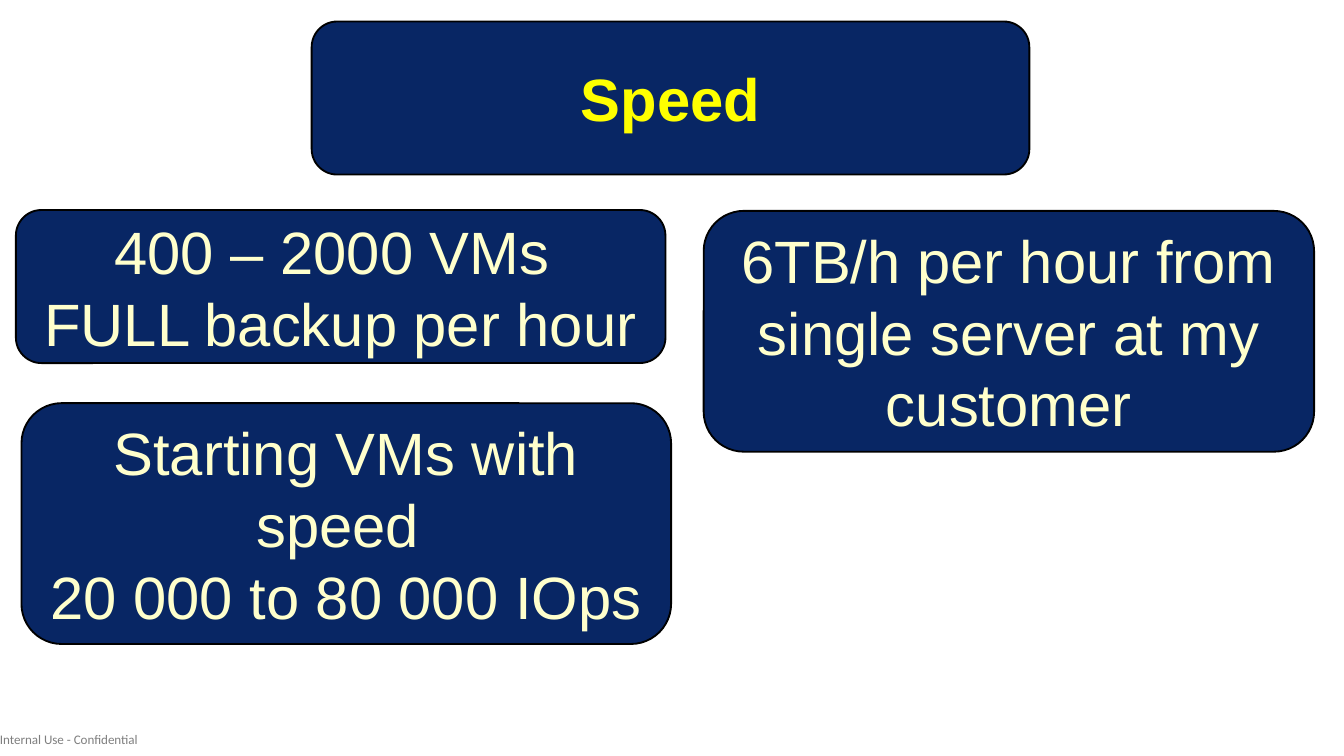
from lxml.etree import SubElement
from pptx import Presentation
from pptx.dml.color import RGBColor
from pptx.enum.shapes import MSO_SHAPE
from pptx.enum.text import MSO_ANCHOR, PP_ALIGN
from pptx.oxml.ns import qn
from pptx.util import Pt

NAVY, BLACK, YELLOW, CREAM, GRAY = "002060", "000000", "FFFF00", "FFFFCC", "7F7F7F"
OPACITY = 97
SHORT, TALL = 82, 129
CARDS = [
    {"lines": ["Speed"], "box": (167, 11.5, 384.5, SHORT), "color": YELLOW, "bold": True},
    {"lines": ["400 – 2000 VMs ", "FULL backup per hour"], "box": (8.5, 112.5, 348, SHORT)},
    {"lines": ["6TB/h per hour from single server at my customer"], "box": (377, 113, 327, TALL)},
    {"lines": ["Starting VMs with speed ", "20 000 to 80 000 IOps"], "box": (11.5, 216, 348, TALL)},
]
FOOTER = "Internal Use - Confidential"
FOOTER_BOX = (0, 388, 93.6, 16.6)


def rgb(value):
    """Turn a hex string into a colour."""
    return RGBColor.from_string(value)


def add_lines(paragraph, lines, font_name, size, color, bold=False):
    """Write the lines as runs separated by line breaks."""
    for index, line in enumerate(lines):
        if index:
            paragraph.add_line_break()
        run = paragraph.add_run()
        run.text = line
        run.font.name = font_name
        run.font.size = Pt(size)
        run.font.bold = bold
        run.font.color.rgb = rgb(color)


def add_card(slide, lines, box, color=CREAM, bold=False):
    """Add a rounded navy card with centred text."""
    shape = slide.shapes.add_shape(MSO_SHAPE.ROUNDED_RECTANGLE, *map(Pt, box))
    shape.shadow.inherit = False
    shape.fill.solid()
    shape.fill.fore_color.rgb = rgb(NAVY)
    fill_color = shape.element.spPr.find(qn("a:solidFill")).find(qn("a:srgbClr"))
    SubElement(fill_color, qn("a:alpha"), val=str(OPACITY * 1000))
    shape.line.color.rgb = rgb(BLACK)
    shape.line.width = Pt(1)
    frame = shape.text_frame
    frame.word_wrap = True
    frame.vertical_anchor = MSO_ANCHOR.MIDDLE
    paragraph = frame.paragraphs[0]
    paragraph.alignment = PP_ALIGN.CENTER
    add_lines(paragraph, lines, "Arial", 32, color, bold)


def add_footer(slide):
    """Add the confidentiality label at the bottom left."""
    frame = slide.shapes.add_textbox(*map(Pt, FOOTER_BOX)).text_frame
    frame.margin_left = frame.margin_right = frame.margin_top = frame.margin_bottom = 0
    frame.word_wrap = False
    frame.vertical_anchor = MSO_ANCHOR.MIDDLE
    add_lines(frame.paragraphs[0], [FOOTER], "Calibri", 7, GRAY)


def main():
    """Build the speed slide."""
    presentation = Presentation()
    presentation.slide_width = Pt(720)
    presentation.slide_height = Pt(405)
    slide = presentation.slides.add_slide(presentation.slide_layouts[6])
    add_footer(slide)
    for card in CARDS:
        add_card(slide, **card)
    presentation.save("out.pptx")


if __name__ == "__main__":
    main()
